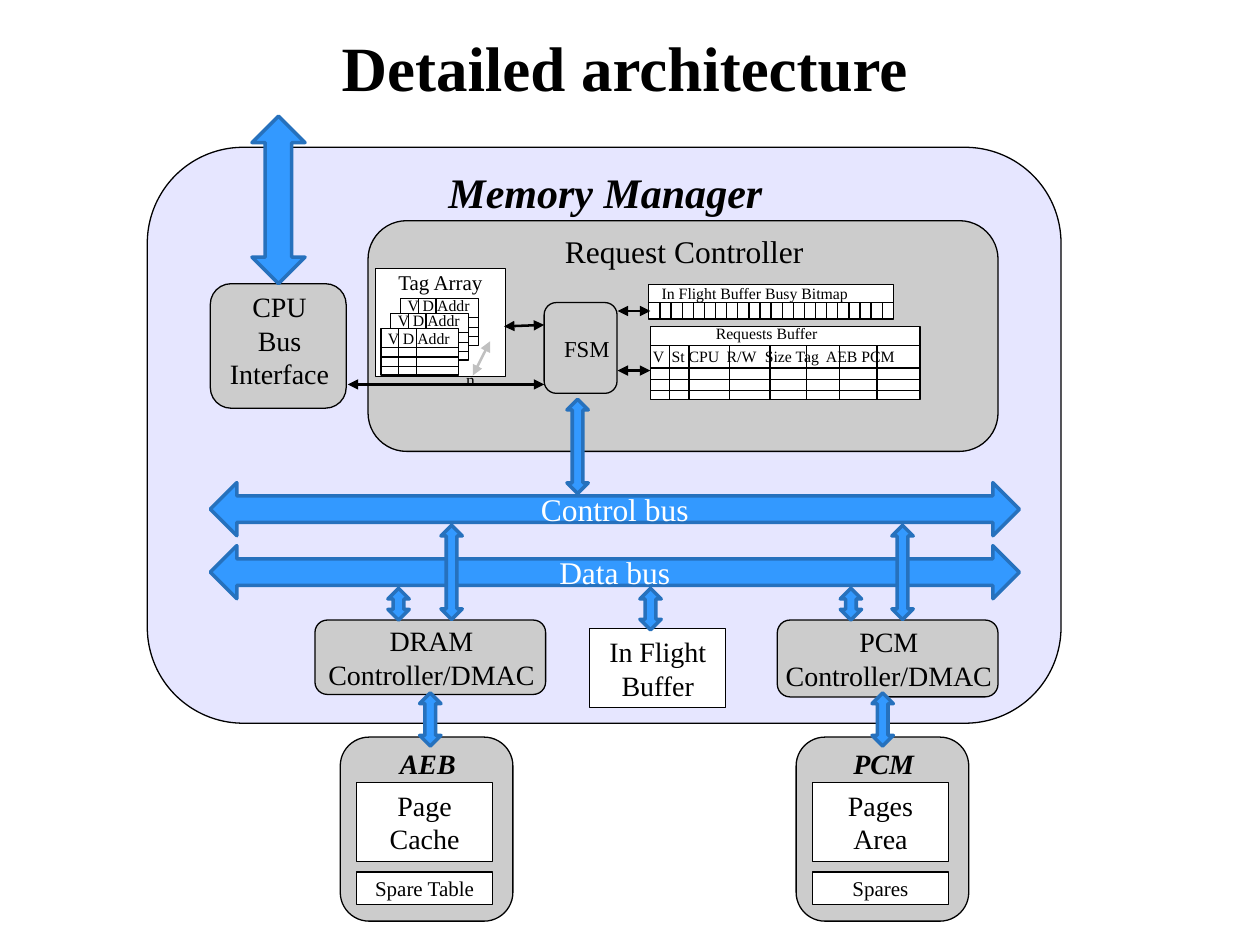
"""Build a slide showing the detailed architecture of a memory manager."""
from dataclasses import dataclass

from lxml import etree
from pptx import Presentation
from pptx.dml.color import RGBColor
from pptx.enum.shapes import MSO_CONNECTOR, MSO_SHAPE
from pptx.enum.text import MSO_ANCHOR, PP_ALIGN
from pptx.oxml.ns import qn
from pptx.util import Cm, Pt

ROUNDED = MSO_SHAPE.FLOWCHART_ALTERNATE_PROCESS
RECTANGLE = MSO_SHAPE.RECTANGLE
UP_DOWN = MSO_SHAPE.UP_DOWN_ARROW
LEFT_RIGHT = MSO_SHAPE.LEFT_RIGHT_ARROW
STRAIGHT = MSO_CONNECTOR.STRAIGHT
TOP, MIDDLE = MSO_ANCHOR.TOP, MSO_ANCHOR.MIDDLE
LEFT, CENTER = PP_ALIGN.LEFT, PP_ALIGN.CENTER


@dataclass(frozen=True)
class Theme:
    """Colours, type sizes and line widths of the slide."""
    font: str = "Times New Roman"
    black: str = "000000"
    white: str = "FFFFFF"
    lavender: str = "E6E6FF"
    grey: str = "CCCCCC"
    silver: str = "C0C0C0"
    blue: str = "3399FF"
    navy: str = "2671BD"
    title: int = 36
    heading: int = 24
    subheading: int = 18
    block: int = 16
    state: int = 13
    label: int = 12
    index: int = 10
    field: int = 9
    thin: float = 0.75
    arrow: float = 1.45
    bus: float = 2


THEME = Theme()


def write(box, lines, size, color=THEME.black, align=CENTER, anchor=TOP,
          insets=(0, 0, 0, 0), wrap=False, bold=False, italic=False):
    """Fill a box with one paragraph per line and return its paragraphs."""
    frame = box.text_frame
    frame.word_wrap = wrap
    frame.vertical_anchor = anchor
    (frame.margin_left, frame.margin_top,
     frame.margin_right, frame.margin_bottom) = map(Cm, insets)
    for number, line in enumerate(lines):
        para = frame.add_paragraph() if number else frame.paragraphs[0]
        para.alignment = align
        span = para.add_run()
        span.text = line
        span.font.name = THEME.font
        span.font.size = Pt(size)
        span.font.bold = bold
        span.font.italic = italic
        span.font.color.rgb = RGBColor.from_string(color)
    return frame.paragraphs


def add_box(page, kind, place, fill, outline=THEME.black, width=THEME.thin):
    """Add a filled and outlined preset shape."""
    box = page.shapes.add_shape(kind, *map(Cm, place))
    box.shadow.inherit = False
    box.fill.solid()
    box.fill.fore_color.rgb = RGBColor.from_string(fill)
    box.line.color.rgb = RGBColor.from_string(outline)
    box.line.width = Pt(width)
    return box


def add_label(page, place, text, size, **style):
    """Add a free text box with a single line."""
    box = page.shapes.add_textbox(*map(Cm, place))
    return write(box, [text], size, **style)


def add_line(page, start, end, color=THEME.black, width=THEME.thin):
    """Add a straight line without a shadow."""
    line = page.shapes.add_connector(STRAIGHT, *map(Cm, (*start, *end)))
    line.line.color.rgb = RGBColor.from_string(color)
    line.line.width = Pt(width)
    etree.SubElement(line._element.spPr, qn("a:effectLst"))
    return line


def add_double_arrow(page, start, end, color=THEME.black):
    """Add a line with a triangular head at both ends."""
    arrow = add_line(page, start, end, color, THEME.arrow)
    for end_name in ("a:headEnd", "a:tailEnd"):
        etree.SubElement(arrow.line._get_or_add_ln(), qn(end_name), type="triangle")


def add_grid(page, place, rows, columns, column_top):
    """Add a white frame ruled at the given row and column offsets."""
    left, top, width, height = place
    add_box(page, RECTANGLE, place, THEME.white)
    for row in rows:
        add_line(page, (left, top + row), (left + width, top + row))
    for column in columns:
        add_line(page, (left + column, top + column_top), (left + column, top + height))


def add_block_arrow(page, kind, place):
    """Add a blue double-headed block arrow."""
    return add_box(page, kind, place, THEME.blue, THEME.navy, THEME.bus)


def add_controllers(page):
    """Add the memory manager and the blocks inside it."""
    manager = add_box(page, ROUNDED, (2.97, 2.97, 18.42, 11.61), THEME.lavender)
    write(manager, ["Memory Manager"], THEME.heading,
          insets=(0.05, -0.18, 0, 0), bold=True, italic=True)
    blocks = [
        ((4.24, 5.72, 2.74, 2.51), ["CPU", "Bus", "Interface"], THEME.block, TOP, 0.05),
        ((7.42, 4.45, 12.7, 4.65), ["Request Controller"], THEME.subheading, TOP, 0.05),
        ((10.97, 6.1, 1.47, 1.83), ["FSM"], THEME.state, MIDDLE, 0.25),
        ((6.35, 12.5, 4.65, 1.5), ["DRAM", "Controller/DMAC"], THEME.block, MIDDLE, 0.05),
        ((15.67, 12.5, 4.45, 1.55), ["PCM", "Controller/DMAC"], THEME.block, MIDDLE, 0.05),
    ]
    for place, lines, size, anchor, inset in blocks:
        block = add_box(page, ROUNDED, place, THEME.grey)
        write(block, lines, size, anchor=anchor, insets=(inset, 0, 0, 0))
    buffer = add_box(page, RECTANGLE, (11.89, 12.67, 2.74, 1.6), THEME.white)
    write(buffer, ["In Flight", "Buffer"], THEME.block, anchor=MIDDLE)


def add_tag_array(page):
    """Add the tag array with its stack of three cards."""
    array = add_box(page, RECTANGLE, (7.57, 5.41, 2.62, 2.18), THEME.white)
    write(array, ["Tag Array"], THEME.label, insets=(0, 0.03, 0, 0))
    for number, label_top in enumerate((5.97, 6.27, 6.63)):
        left, top = 8.08 - 0.2 * number, 6.02 + 0.3 * number
        add_grid(page, (left, top, 1.57, 0.94), (0.38, 0.58, 0.77), (0.36, 0.71), 0)
        add_label(page, (left + 0.14, label_top, 2.84, 0.5), "V D Addr",
                  THEME.field, align=LEFT)
    add_double_arrow(page, (9.53, 7.57), (9.88, 6.88), THEME.silver)
    add_label(page, (9.4, 7.44, 0.2, 0.41), "n", THEME.index, align=LEFT)


def add_request_tables(page):
    """Add the busy bitmap and the requests buffer."""
    cells, width = 22, 4.93
    ticks = [width / cells * cell for cell in range(1, cells)]
    add_grid(page, (13.08, 5.74, width, 0.69), [0.36], ticks, 0.36)
    add_label(page, (13.34, 5.72, 4.95, 0.74), "In Flight Buffer Busy Bitmap",
              THEME.field, align=LEFT)
    add_grid(page, (13.11, 6.58, 5.44, 1.47), (0.38, 0.84, 1.07, 1.29),
             (0.38, 0.78, 1.6, 2.41, 3.15, 3.81, 4.57), 0.38)
    add_label(page, (14.43, 6.53, 3.12, 0.69), "Requests Buffer", THEME.field, align=LEFT)
    fields = add_label(page, (13.16, 6.99, 6.07, 0.69),
                       "V\tSt CPU\tR/W\tSize Tag\tAEB PCM", THEME.field, align=LEFT)
    stops = etree.SubElement(fields[0]._p.get_or_add_pPr(), qn("a:tabLst"))
    for position in (0.38, 1.49, 2.26, 3.49):
        etree.SubElement(stops, qn("a:tab"), pos=str(int(Cm(position))), algn="l")


def add_memory(page, left, name, store, spare):
    """Add a memory with its main store and spare store."""
    memory = add_box(page, ROUNDED, (left, 14.86, 3.48, 3.71), THEME.grey)
    write(memory, [name], THEME.block, insets=(0.05, 0.03, 0, 0), bold=True, italic=True)
    for top, height, lines, size in ((15.77, 1.6, store, THEME.block),
                                     (17.58, 0.66, [spare], THEME.label)):
        part = add_box(page, RECTANGLE, (left + 0.33, top, 2.74, height), THEME.white)
        write(part, lines, size, anchor=MIDDLE)


def add_links(page):
    """Add the buses and the arrows that join the blocks."""
    for start, end in (((12.45, 6.27), (13.11, 6.27)), ((12.45, 7.47), (13.11, 7.47)),
                       ((10.16, 6.58), (10.97, 6.55)), ((7.01, 7.75), (10.97, 7.75))):
        add_double_arrow(page, start, end)
    add_block_arrow(page, UP_DOWN, (5.08, 2.34, 1.07, 3.38))
    for top, name in ((9.73, "Control bus"), (11, "Data bus")):
        bus = add_block_arrow(page, LEFT_RIGHT, (4.24, top, 16.31, 1.07))
        write(bus, [name], THEME.subheading, THEME.white, anchor=MIDDLE,
              insets=(0.25, 0.13, 0.25, 0.13), wrap=True)
    for left, top, height in ((11.43, 8.05, 1.9), (12.9, 11.86, 0.84),
                              (16.94, 11.86, 0.64), (17.98, 10.59, 1.9),
                              (7.82, 11.86, 0.64), (8.89, 10.59, 1.9),
                              (17.58, 13.97, 1.07), (8.46, 13.97, 1.07)):
        add_block_arrow(page, UP_DOWN, (left, top, 0.43, height))


def main():
    """Build and save the deck."""
    deck = Presentation()
    deck.slide_width, deck.slide_height = Cm(25.4), Cm(19.05)
    page = deck.slides.add_slide(deck.slide_layouts[6])
    add_controllers(page)
    add_tag_array(page)
    add_request_tables(page)
    add_memory(page, 6.86, "AEB", ["Page", "Cache"], "Spare Table")
    add_memory(page, 16.05, "PCM", ["Pages", "Area"], "Spares")
    add_links(page)
    add_label(page, (2.74, 0.43, 19.71, 1.83), "Detailed architecture", THEME.title,
              anchor=MIDDLE, insets=(0.23, 0.1, 0.23, 0.1), wrap=True, bold=True)
    deck.save("out.pptx")


if __name__ == "__main__":
    main()
